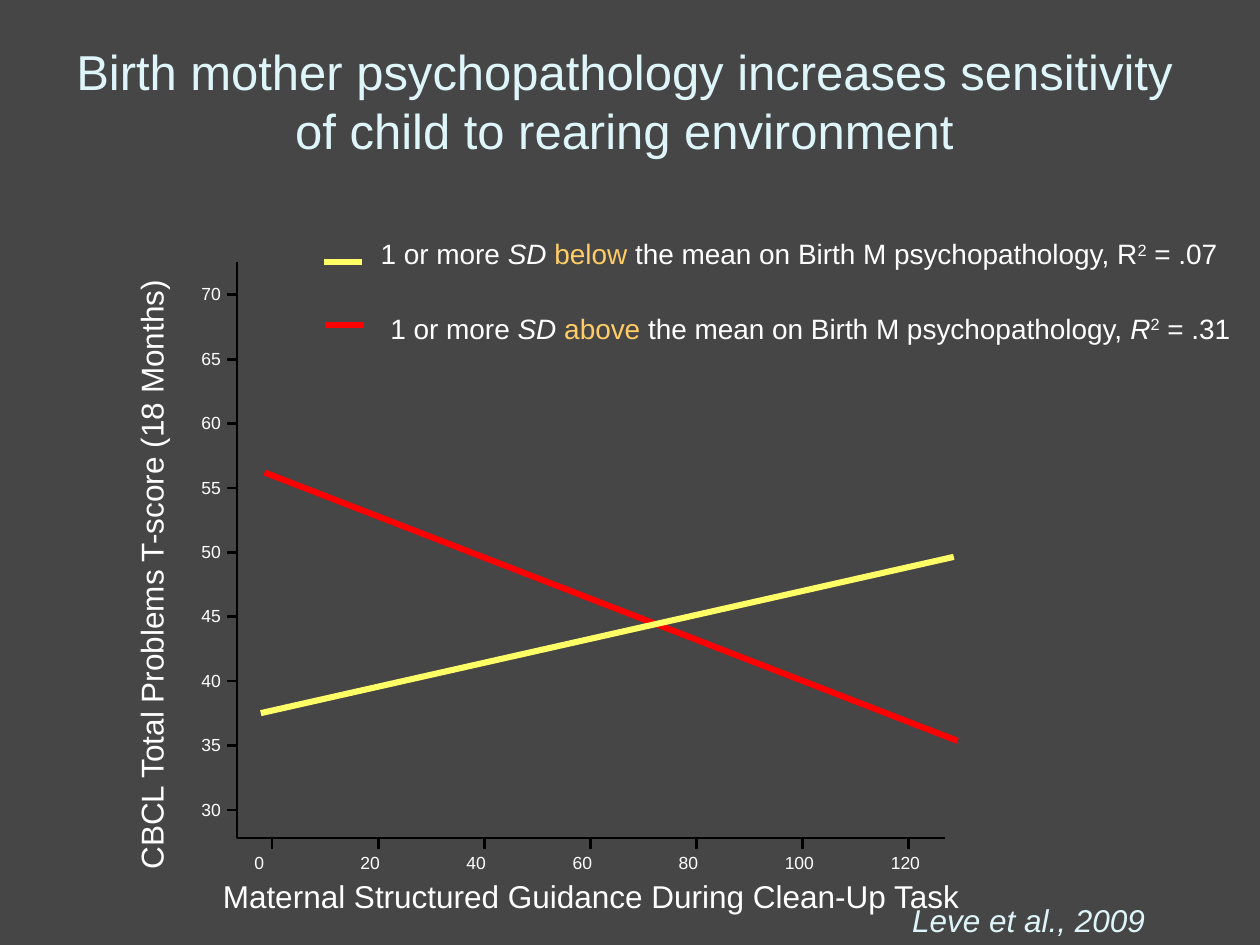
import pptx
import pptx.dml.color
import pptx.enum.shapes
import pptx.enum.text
import pptx.util
from lxml import etree

COLORS = {"background": "464646", "heading": "DEF5FA", "body": "FFFFFF", "emphasis": "FFCC66",
          "axis": "000000", "below": "FFFF66", "above": "FF0000"}
COLUMNS, ROWS = 100, 75
ALIGN = pptx.enum.text.PP_ALIGN
ANCHOR = pptx.enum.text.MSO_ANCHOR
DRAWING_NS = "http://schemas.openxmlformats.org/drawingml/2006/main"

# Axis geometry in grid units: the first tick and the step between ticks
AXIS_X, AXIS_Y = 18.8, 66.5
FIRST_SCORE_ROW, SCORE_STEP = 23.4, 5.11
FIRST_GUIDANCE_COLUMN, GUIDANCE_STEP = 21.6, 8.42


def rgb(name):
    return pptx.dml.color.RGBColor.from_string(COLORS[name])


class SlideBuilder:
    """Draws on one slide; lengths are columns and rows of a 100 by 75 grid."""

    def __init__(self, presentation, font="Arial"):
        self.font = font
        self.column = presentation.slide_width / COLUMNS
        self.row = presentation.slide_height / ROWS
        self.slide = presentation.slides.add_slide(presentation.slide_layouts[5])
        self.slide.background.fill.solid()
        self.slide.background.fill.fore_color.rgb = rgb("background")

    def point(self, x, y):
        return round(x * self.column), round(y * self.row)

    def style(self, font, size, color, italic=None):
        font.name = self.font
        font.size = pptx.util.Pt(size)
        font.color.rgb = rgb(color)
        font.italic = italic

    def title(self, text, x, y, width, height):
        heading = self.slide.shapes.title
        heading.left, heading.top = self.point(x, y)
        heading.width, heading.height = self.point(width, height)
        frame = heading.text_frame
        frame.text = text
        frame.vertical_anchor = ANCHOR.MIDDLE
        frame.paragraphs[0].alignment = ALIGN.CENTER
        self.style(frame.paragraphs[0].font, 28, "heading")

    def text(self, text, x, y, width, height, size=18, color="body", italic=None,
             align=ALIGN.LEFT):
        box = self.slide.shapes.add_textbox(*self.point(x, y), *self.point(width, height))
        frame = box.text_frame
        frame.word_wrap = True
        paragraph = frame.paragraphs[0]
        paragraph.text = text
        paragraph.alignment = align
        self.style(paragraph.font, size, color, italic)
        return frame

    def upward_text(self, text, x, y, width, height):
        frame = self.text(text, x, y, width, height)
        frame._txBody.bodyPr.set("vert", "vert270")

    def legend_text(self, group, r_italic, x, y, width, height, indent=1):
        frame = self.text("", x, y, width, height, size=16)
        frame.margin_left = round(indent * self.column)
        pieces = [("1 or more ", False), ("SD ", True), (group, False),
                  (" the mean on Birth M psychopathology,", False),
                  (" R", r_italic), ("2", False), (" = .07" if group == "below" else " = .31", False)]
        for piece, italic in pieces:
            run = frame.paragraphs[0].add_run()
            run.text = piece
            self.style(run.font, 16, "emphasis" if piece == group else "body", italic)
            if piece == "2":
                run.font._element.set("baseline", "30000")

    def line(self, start, end, color, weight):
        connector = self.slide.shapes.add_connector(
            pptx.enum.shapes.MSO_CONNECTOR.STRAIGHT, *self.point(*start), *self.point(*end))
        connector.line.color.rgb = rgb(color)
        connector.line.width = pptx.util.Pt(weight)
        etree.SubElement(connector._element.spPr, f"{{{DRAWING_NS}}}effectLst")

    def axes(self, *corners):
        start, *others = [self.point(*corner) for corner in corners]
        outline = self.slide.shapes.build_freeform(*start)
        outline.add_line_segments(others, close=False)
        frame = outline.convert_to_shape()
        frame.shadow.inherit = False
        frame.fill.background()
        frame.line.color.rgb = rgb("axis")
        frame.line.width = pptx.util.Pt(1.5)

    def tick_label(self, value, x, y, align):
        frame = self.text(str(value), x, y, 4.8, 2.5, size=10, align=align)
        frame.margin_bottom = 0


def main():
    presentation = pptx.Presentation()
    presentation.slide_width = pptx.util.Inches(10)
    presentation.slide_height = pptx.util.Inches(7.5)
    builder = SlideBuilder(presentation)

    builder.title("Birth mother psychopathology increases sensitivity of child to rearing environment",
                  3.3, 2.5, 92.5, 11)

    builder.axes((AXIS_X, 20.8), (AXIS_X, AXIS_Y), (75, AXIS_Y))
    for index, score in enumerate(range(70, 25, -5)):
        y = FIRST_SCORE_ROW + index * SCORE_STEP
        builder.line((AXIS_X - 0.8, y), (AXIS_X, y), "axis", 1.5)
        builder.tick_label(score, 13.7, y - 1.4, ALIGN.RIGHT)
    for index, guidance in enumerate(range(0, 140, 20)):
        x = FIRST_GUIDANCE_COLUMN + index * GUIDANCE_STEP
        builder.line((x, AXIS_Y), (x, AXIS_Y + 0.9), "axis", 1.5)
        builder.tick_label(guidance, x - 2.4, 67.1, ALIGN.LEFT)
    builder.text("Maternal Structured Guidance During Clean-Up Task", 16.7, 69.1, 67.5, 3.8)
    builder.upward_text("CBCL Total Problems T-score (18 Months)", 10, 15, 4, 55)

    builder.line((21, 37.5), (76, 58.8), "above", 3.5)
    builder.line((20.7, 56.6), (75.7, 44.2), "below", 3.5)

    builder.line((25.7, 20.8), (28.7, 20.8), "below", 3.5)
    builder.legend_text("below", False, 24.2, 18.3, 74.2, 5, indent=6)
    builder.line((25.8, 25.8), (28.9, 25.8), "above", 3.5)
    builder.legend_text("above", True, 30, 24.2, 70, 3.7)

    builder.text("Leve et al., 2009", 71.4, 71, 36.9, 4, color="heading", italic=True)
    presentation.save("out.pptx")


if __name__ == "__main__":
    main()
